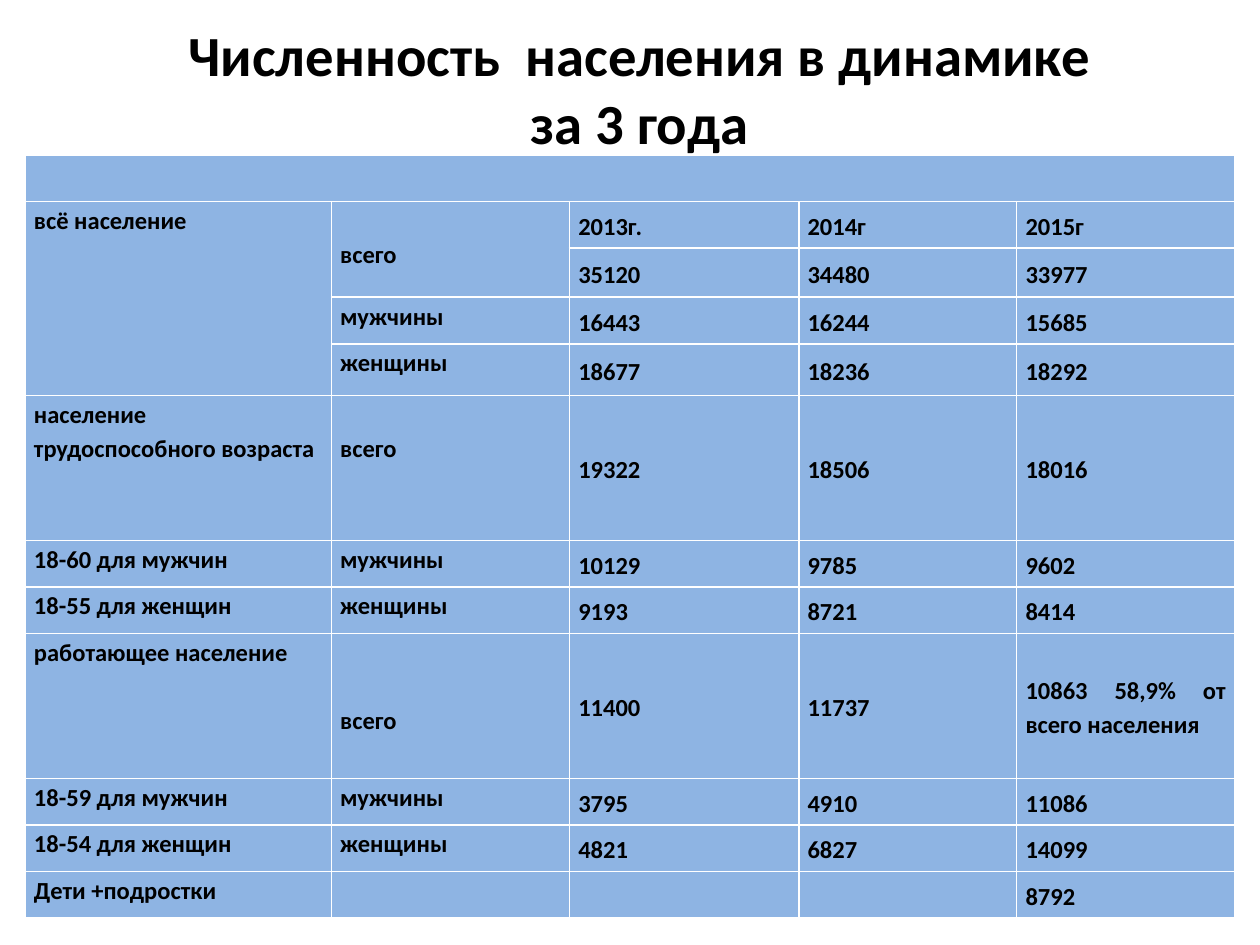
"""Build a slide with a table of population figures over three years."""
from dataclasses import dataclass

from pptx import Presentation
from pptx.dml.color import RGBColor as RGB
from pptx.enum.text import MSO_ANCHOR as Anchor, MSO_AUTO_SIZE as AutoSize, PP_ALIGN as Align
from pptx.util import Inches, Pt


@dataclass(frozen=True)
class Theme:
    font: str = "Calibri"
    text: RGB = RGB(0, 0, 0)
    cell: RGB = RGB(0x8E, 0xB4, 0xE3)
    title_size: float = 32.4
    cell_size: float = 14
    line_step: float = 0.27


THEME = Theme()
TITLE = "Численность  населения в динамике за 3 года"
COLS = [2.43, 1.89, 1.82, 1.73, 1.73]
ROWS = [0.37, 0.37, 0.39, 0.37, 0.41, 1.15, 0.37, 0.37, 1.15, 0.37, 0.37, 0.37]
DATA = [
    ["", "", "", "", ""],
    ["всё население", "всего", "2013г.", "2014г", "2015г"],
    ["", "", "35120", "34480", "33977"],
    ["", "мужчины", "16443", "16244", "15685"],
    ["", "женщины", "18677", "18236", "18292"],
    ["население трудоспособного возраста", "всего", "19322", "18506", "18016"],
    ["18-60 для мужчин", "мужчины", "10129", "9785", "9602"],
    ["18-55 для женщин", "женщины", "9193", "8721", "8414"],
    ["работающее население", "всего", "11400", "11737", "10863 58,9% от всего населения"],
    ["18-59 для мужчин", "мужчины", "3795", "4910", "11086"],
    ["18-54 для женщин", "женщины", "4821", "6827", "14099"],
    ["Дети +подростки", "", "", "", "8792"],
]
MERGES = [((0, 0), (0, 4)), ((1, 0), (4, 0)), ((1, 1), (2, 1))]
LINES_ABOVE = {(1, 1): 1, (5, 1): 1, (8, 1): 2}


def apply(obj, **values):
    """Set each named attribute on an object."""
    for name, value in values.items():
        setattr(obj, name, value)


def write(p, text, size, **values):
    """Put one bold run into a paragraph and format both."""
    apply(p, **values)
    r = p.add_run()
    r.text = text
    apply(r.font, name=THEME.font, size=Pt(size), bold=True)
    r.font.color.rgb = THEME.text


def add_title(s):
    """Add the centred slide title."""
    sp = s.shapes.add_textbox(Inches(1.14), Inches(0.36), Inches(7.87), Inches(1.02))
    tf = sp.text_frame
    apply(tf, word_wrap=True, auto_size=AutoSize.NONE, vertical_anchor=Anchor.BOTTOM,
          margin_top=0, margin_bottom=Inches(0.14))
    write(tf.paragraphs[0], TITLE, THEME.title_size, alignment=Align.CENTER)


def fill_cell(cell, text, is_label, lines_above):
    """Format a cell and write its text, if it has any."""
    cell.fill.solid()
    cell.fill.fore_color.rgb = THEME.cell
    apply(cell, margin_left=Inches(0.07), margin_right=Inches(0.07), margin_bottom=0,
          margin_top=Inches(lines_above * THEME.line_step),
          vertical_anchor=Anchor.TOP if is_label else Anchor.MIDDLE)
    if text:
        write(cell.text_frame.paragraphs[0], text, THEME.cell_size,
              alignment=Align.JUSTIFY, line_spacing=1.15)


def add_population_table(s):
    """Add the table with its merged cells and figures."""
    table = s.shapes.add_table(len(ROWS), len(COLS), Inches(0.2), Inches(1.23),
                               Inches(sum(COLS)), Inches(sum(ROWS))).table
    apply(table, first_row=True, last_row=True, horz_banding=False)
    for col, width in zip(table.columns, COLS):
        col.width = Inches(width)
    for row, height in zip(table.rows, ROWS):
        row.height = Inches(height)
    for i, texts in enumerate(DATA):
        for j, text in enumerate(texts):
            fill_cell(table.cell(i, j), text, j < 2, LINES_ABOVE.get((i, j), 0))
    for first, last in MERGES:
        table.cell(*first).merge(table.cell(*last))


def main():
    """Create the presentation and save it."""
    prs = Presentation()
    apply(prs, slide_width=Inches(10), slide_height=Inches(7.5))
    s = prs.slides.add_slide(prs.slide_layouts[6])
    add_title(s)
    add_population_table(s)
    prs.save("out.pptx")


if __name__ == "__main__":
    main()
